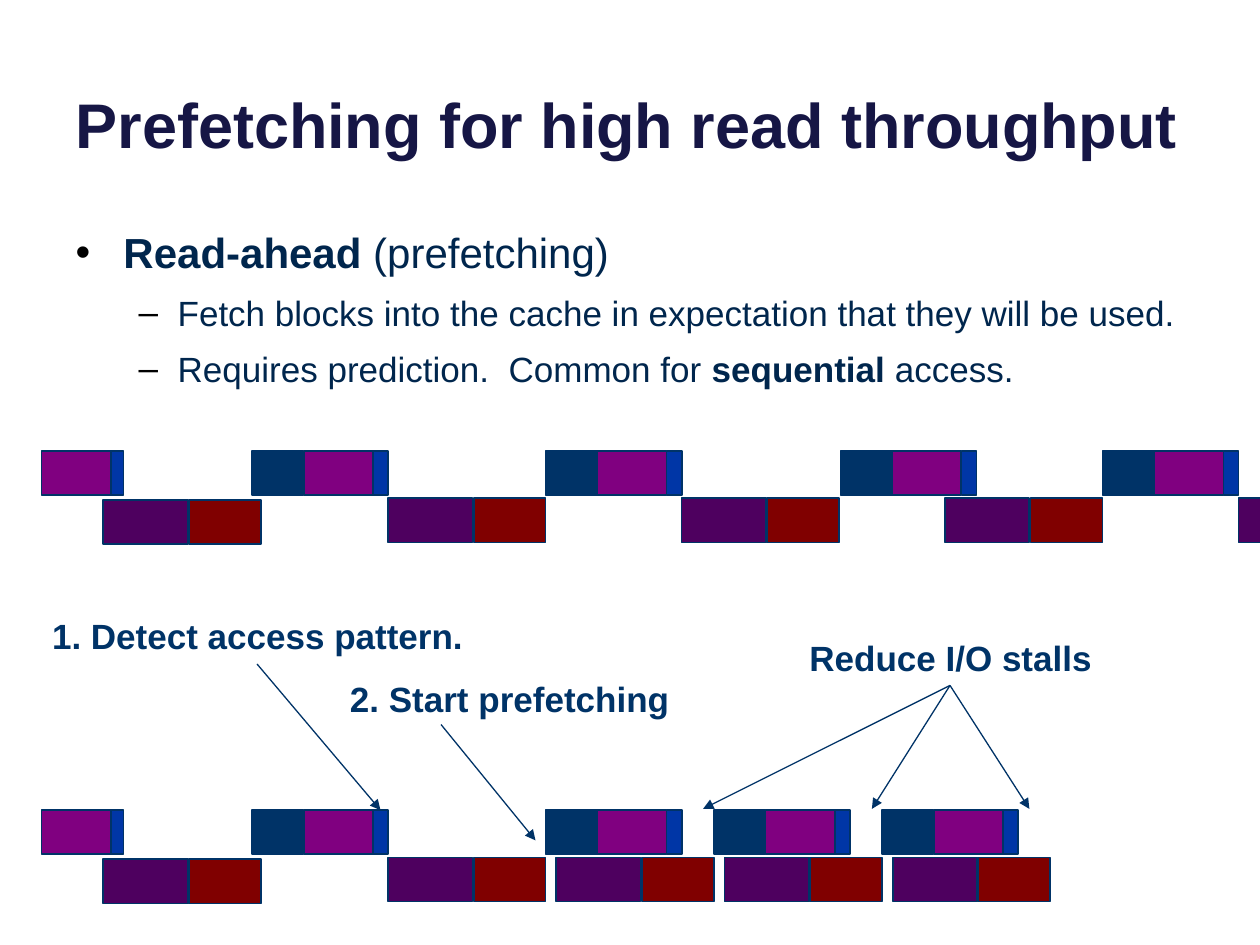
from lxml.etree import SubElement
from pptx import Presentation
from pptx.dml.color import RGBColor
from pptx.enum.shapes import MSO_CONNECTOR, MSO_SHAPE
from pptx.enum.text import MSO_ANCHOR, MSO_AUTO_SIZE, PP_ALIGN
from pptx.oxml.ns import qn
from pptx.util import Inches, Pt

COLORS = {
    "title": "161645", "body": "00264D", "bullet": "000000", "ink": "003367",
    "compute": "800080", "request": "0036A6", "resume": "003367",
    "seek": "4E005F", "transfer": "800000",
}
BLOCK_HEIGHT = 0.35


class SlideBuilder:
    font = "Arial"

    def __init__(self, slide):
        self.slide = slide

    def color(self, name):
        return RGBColor.from_string(COLORS[name])

    def run(self, paragraph, text, size, color, bold=False):
        run = paragraph.add_run()
        run.text = text
        run.font.name = self.font
        run.font.size = Pt(size)
        run.font.bold = bold
        run.font.color.rgb = self.color(color)

    def place(self, shape, left, top, width, height):
        shape.left, shape.top = Inches(left), Inches(top)
        shape.width, shape.height = Inches(width), Inches(height)

    def title(self, text, *box):
        title = self.slide.shapes.title
        self.place(title, *box)
        frame = title.text_frame
        frame.auto_size = MSO_AUTO_SIZE.NONE
        frame.vertical_anchor = MSO_ANCHOR.BOTTOM
        frame.paragraphs[0].alignment = PP_ALIGN.LEFT
        self.run(frame.paragraphs[0], text, 36, "title", bold=True)

    def bullets(self, items, *box):
        body = self.slide.placeholders[1]
        self.place(body, *box)
        frame = body.text_frame
        frame.auto_size = MSO_AUTO_SIZE.NONE
        levels = [(24, 9, 0.38, 0.38, "•"), (20, 8, 0.81, 0.31, "–")]
        for index, (level, parts) in enumerate(items):
            paragraph = frame.add_paragraph() if index else frame.paragraphs[0]
            size, before, margin, hanging, mark = levels[level]
            paragraph.level = level
            paragraph.space_before = Pt(before)
            props = paragraph._p.get_or_add_pPr()
            props.set("marL", str(Inches(margin)))
            props.set("indent", str(-Inches(hanging)))
            mark_color = SubElement(props, qn("a:buClr"))
            SubElement(mark_color, qn("a:srgbClr"), val=COLORS["bullet"])
            SubElement(props, qn("a:buFont"), typeface=self.font)
            SubElement(props, qn("a:buChar"), char=mark)
            for text, bold in parts:
                self.run(paragraph, text, size, "body", bold)

    def block(self, left, top, width, fill):
        block = self.slide.shapes.add_shape(
            MSO_SHAPE.RECTANGLE, Inches(left), Inches(top), Inches(width), Inches(BLOCK_HEIGHT))
        block.shadow.inherit = False
        block.fill.solid()
        block.fill.fore_color.rgb = self.color(fill)
        block.line.color.rgb = self.color("ink")
        block.line.width = Pt(1)

    def cpu_burst(self, left, top):
        self.block(left, top, 0.41, "resume")
        self.block(left + 0.96, top, 0.12, "request")
        self.block(left + 0.41, top, 0.55, "compute")

    def disk_read(self, left, top):
        self.block(left, top, 0.67, "seek")
        self.block(left + 0.68, top, 0.57, "transfer")

    def timeline(self, top, bursts, reads):
        # The first burst is already under way
        self.block(0.86, top, 0.12, "request")
        self.block(0.33, top, 0.55, "compute")
        self.disk_read(0.82, top + 0.39)
        for left in bursts:
            self.cpu_burst(left, top)
        for left in reads:
            self.disk_read(left, top + 0.375)

    def label(self, text, left, top):
        label = self.slide.shapes.add_textbox(
            Inches(left), Inches(top), Inches(3.75), Inches(0.44))
        frame = label.text_frame
        frame.word_wrap = True
        frame.auto_size = MSO_AUTO_SIZE.SHAPE_TO_FIT_TEXT
        frame.paragraphs[0].alignment = PP_ALIGN.CENTER
        self.run(frame.paragraphs[0], text, 20, "ink", bold=True)

    def arrow(self, start, end):
        arrow = self.slide.shapes.add_connector(
            MSO_CONNECTOR.STRAIGHT, *(Inches(value) for value in start + end))
        arrow.line.color.rgb = self.color("ink")
        arrow.line.width = Pt(0.75)
        SubElement(arrow.line._get_or_add_ln(), qn("a:tailEnd"), type="triangle")
        SubElement(arrow._element.spPr, qn("a:effectLst"))


def main():
    deck = Presentation()
    deck.slide_width, deck.slide_height = Inches(10), Inches(7.5)
    builder = SlideBuilder(deck.slides.add_slide(deck.slide_layouts[1]))

    # Title and definition
    builder.title("Prefetching for high read throughput", 0.5, -0.37, 9, 1.7)
    builder.bullets([
        (0, [("Read-ahead ", True), ("(prefetching)", False)]),
        (1, [("Fetch blocks into the cache in expectation that they will be used.", False)]),
        (1, [("Requires prediction.  Common for ", False), ("sequential", True),
             (" access.", False)]),
    ], 0.5, 1.75, 9, 1.58)

    # Without prefetching: each read waits for a burst to end
    plain_top = 3.58
    builder.timeline(plain_top, [2, 4.33, 6.67, 8.75], [3.08, 5.41, 7.5])
    builder.block(9.83, plain_top + 0.375, 0.67, "seek")

    # With prefetching: reads run back to back
    period = 1.335
    builder.timeline(6.43, [2] + [4.33 + period * i for i in range(3)],
                     [3.08 + period * i for i in range(4)])

    # Notes on the prefetching timeline
    builder.label("1. Detect access pattern.", 0.17, 4.83)
    builder.arrow((2.04, 5.27), (3.02, 6.43))
    builder.label("2. Start prefetching", 2.17, 5.33)
    builder.arrow((3.5, 5.75), (4.25, 6.67))
    builder.label("Reduce I/O stalls", 5.67, 5)
    for stall in (5.58, 6.92, 8.17):
        builder.arrow((7.54, 5.44), (stall, 6.42))

    deck.save("out.pptx")


if __name__ == "__main__":
    main()
